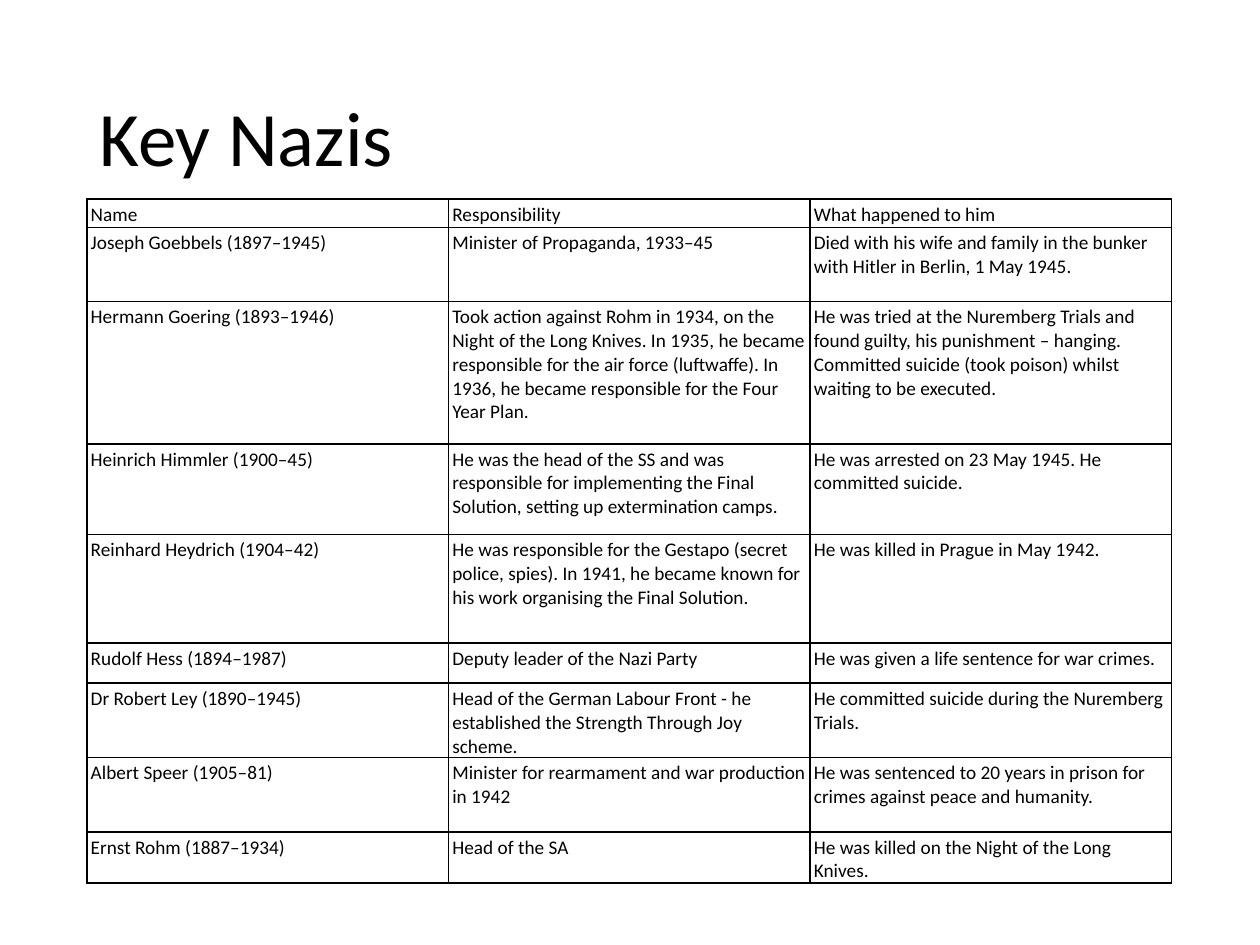
from lxml.etree import SubElement
from pptx import Presentation
from pptx.dml.color import RGBColor
from pptx.enum.text import MSO_ANCHOR as Anchor
from pptx.oxml.ns import qn
from pptx.util import Inches, Pt

COLUMN_WIDTH = 2.87
ROW_HEIGHTS = [0.18, 0.59, 1.13, 0.72, 0.86, 0.32, 0.59, 0.59, 0.32]
ROWS = [
    ("Name", "Responsibility", "What happened to him"),
    ("Joseph Goebbels (1897–1945)",
     "Minister of Propaganda, 1933–45",
     "Died with his wife and family in the bunker with Hitler in Berlin, 1 May 1945."),
    ("Hermann Goering (1893–1946)",
     "Took action against Rohm in 1934, on the Night of the Long Knives. In 1935, he became "
     "responsible for the air force (luftwaffe). In 1936, he became responsible for the Four "
     "Year Plan.",
     "He was tried at the Nuremberg Trials and found guilty, his punishment – hanging. "
     "Committed suicide (took poison) whilst waiting to be executed."),
    ("Heinrich Himmler (1900–45)",
     "He was the head of the SS and was responsible for implementing the Final Solution, "
     "setting up extermination camps.",
     "He was arrested on 23 May 1945. He committed suicide."),
    ("Reinhard Heydrich (1904–42)",
     "He was responsible for the Gestapo (secret police, spies). In 1941, he became known for "
     "his work organising the Final Solution.",
     "He was killed in Prague in May 1942."),
    ("Rudolf Hess (1894–1987)",
     "Deputy leader of the Nazi Party",
     "He was given a life sentence for war crimes."),
    ("Dr Robert Ley (1890–1945)",
     "Head of the German Labour Front - he established the Strength Through Joy scheme.",
     "He committed suicide during the Nuremberg Trials."),
    ("Albert Speer (1905–81)",
     "Minister for rearmament and war production in 1942",
     "He was sentenced to 20 years in prison for crimes against peace and humanity."),
    ("Ernst Rohm (1887–1934)",
     "Head of the SA",
     "He was killed on the Night of the Long Knives."),
]


def color(hex_code):
    return RGBColor.from_string(hex_code)


class SlideBuilder:
    font = "Calibri"
    ink = "000000"
    paper = "FFFFFF"

    def __init__(self, slide):
        self.slide = slide

    def set_text(self, frame, text, size):
        frame.text = text
        for para in frame.paragraphs:
            for span in para.runs:
                span.font.name = self.font
                span.font.size = Pt(size)
                span.font.color.rgb = color(self.ink)

    def title(self, text, left, top, width, height):
        box = self.slide.shapes.add_textbox(
            Inches(left), Inches(top), Inches(width), Inches(height))
        frame = box.text_frame
        frame.word_wrap = True
        frame.vertical_anchor = Anchor.MIDDLE
        self.set_text(frame, text, 44)
        frame.paragraphs[0].line_spacing = 0.9

    def borders(self, cell):
        properties = cell._tc.get_or_add_tcPr()
        for side in ("a:lnL", "a:lnR", "a:lnT", "a:lnB"):
            line = SubElement(properties, qn(side), w=str(Pt(1)))
            fill = SubElement(line, qn("a:solidFill"))
            SubElement(fill, qn("a:srgbClr"), val=self.ink)

    def cell(self, cell, text):
        cell.margin_left = cell.margin_top = Inches(0.03)
        cell.margin_right = Inches(0.02)
        cell.margin_bottom = Inches(0.01)
        self.borders(cell)
        cell.fill.solid()
        cell.fill.fore_color.rgb = color(self.paper)
        self.set_text(cell.text_frame, text, 11)

    def table(self, rows, left, top, column_width, row_heights):
        columns = len(rows[0])
        table = self.slide.shapes.add_table(
            len(rows), columns, Inches(left), Inches(top),
            Inches(column_width * columns), Inches(sum(row_heights))).table
        table.first_row = table.horz_banding = False
        for column in table.columns:
            column.width = Inches(column_width)
        for row, height, texts in zip(table.rows, row_heights, rows):
            row.height = Inches(height)
            for cell, text in zip(row.cells, texts):
                self.cell(cell, text)


def main():
    deck = Presentation()
    deck.slide_width, deck.slide_height = Inches(10), Inches(7.5)
    page = SlideBuilder(deck.slides.add_slide(deck.slide_layouts[6]))

    # Heading
    page.title("Key Nazis", 0.69, 0.4, 8.62, 1.45)

    # Names, roles and fates
    page.table(ROWS, 0.69, 1.58, COLUMN_WIDTH, ROW_HEIGHTS)

    deck.save("out.pptx")


if __name__ == "__main__":
    main()
